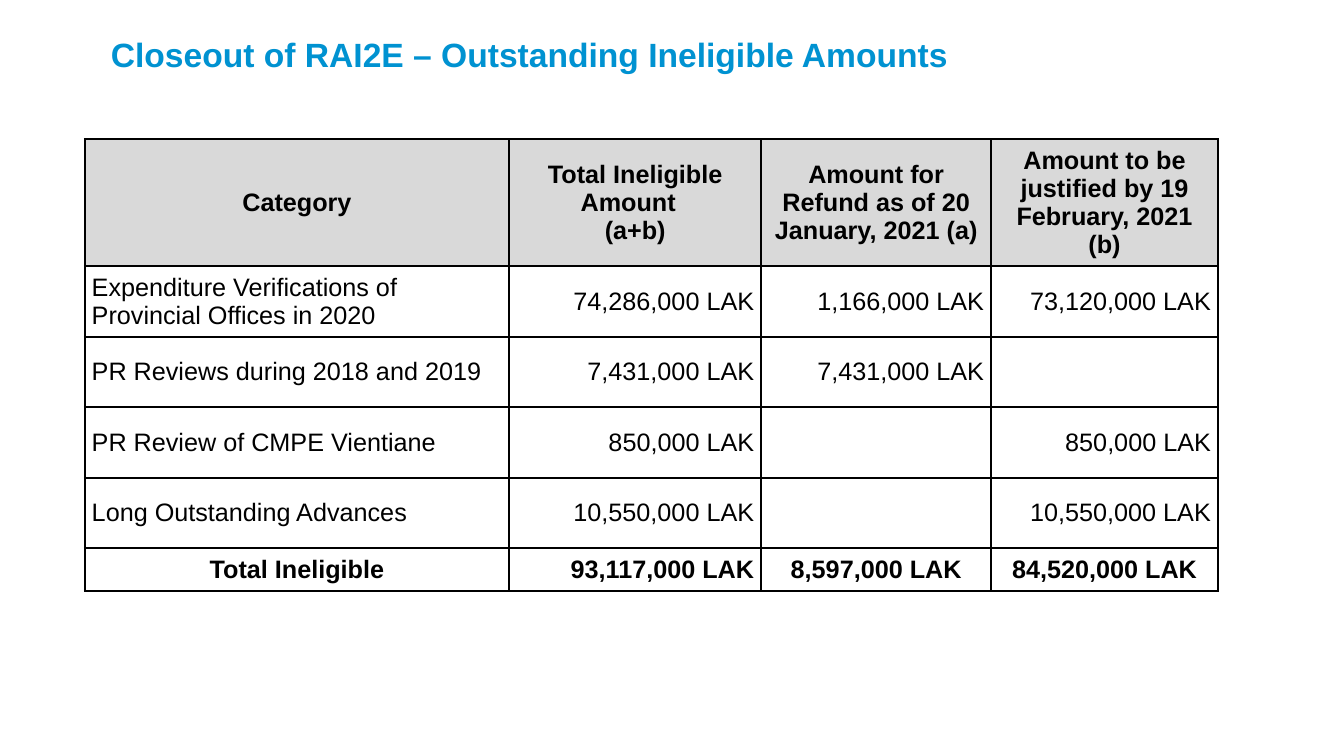
"""Build the slide on outstanding ineligible amounts."""
import dataclasses

import lxml.etree
import pptx
import pptx.dml.color
import pptx.enum.text
import pptx.oxml.ns
import pptx.util

Inches = pptx.util.Inches
Align = pptx.enum.text.PP_ALIGN
Anchor = pptx.enum.text.MSO_ANCHOR


@dataclasses.dataclass(frozen=True)
class Theme:
    font: str = "Arial"
    blue: str = "0092D1"
    black: str = "000000"
    grey: str = "D9D9D9"
    white: str = "FFFFFF"
    title: int = 24
    body: int = 18
    line: float = 1.5


THEME = Theme()
WIDTHS = [4.21, 2.5, 2.28, 2.25]
HEIGHTS = [1.26, 0.7, 0.7, 0.7, 0.7, 0.42]
ROWS = [
    ["Category", "Total Ineligible Amount  \n(a+b)",
     "Amount for Refund as of 20 January, 2021 (a)",
     "Amount to be justified by 19 February, 2021 (b)"],
    ["Expenditure Verifications of Provincial Offices in 2020",
     "74,286,000 LAK", "1,166,000 LAK", "73,120,000 LAK"],
    ["PR Reviews during 2018 and 2019", "7,431,000 LAK", "7,431,000 LAK", ""],
    ["PR Review of CMPE Vientiane", "850,000 LAK", "", "850,000 LAK"],
    ["Long Outstanding Advances", "10,550,000 LAK", "", "10,550,000 LAK"],
    ["Total Ineligible", "93,117,000 LAK", "8,597,000 LAK", "84,520,000 LAK"],
]
BODY = [Align.LEFT] + [Align.RIGHT] * 3
ALIGNS = [[Align.CENTER] * 4] + [BODY] * 4 + [
    [Align.CENTER, Align.RIGHT, Align.CENTER, Align.CENTER]]


def style(frame, size, color, bold, align):
    """Format every run and paragraph of a text frame."""
    for para in frame.paragraphs:
        para.alignment = align
        for run in para.runs:
            run.font.name = THEME.font
            run.font.size = pptx.util.Pt(size)
            run.font.bold = bold
            run.font.color.rgb = pptx.dml.color.RGBColor.from_string(color)


def add_title(slide, text):
    """Add the slide heading."""
    box = slide.shapes.add_textbox(
        Inches(1.1), Inches(0.1), Inches(11.23), Inches(0.87))
    frame = box.text_frame
    frame.word_wrap = True
    frame.vertical_anchor = Anchor.MIDDLE
    frame.margin_left = frame.margin_right = 0
    frame.margin_top = frame.margin_bottom = 0
    frame.text = text
    style(frame, THEME.title, THEME.blue, True, Align.LEFT)


def add_edges(cell):
    """Draw a solid line on each side of a cell."""
    name = pptx.oxml.ns.qn
    props = cell._tc.get_or_add_tcPr()
    for side in ("a:lnL", "a:lnR", "a:lnT", "a:lnB"):
        width = str(int(pptx.util.Pt(THEME.line)))
        line = lxml.etree.SubElement(props, name(side), w=width)
        fill = lxml.etree.SubElement(line, name("a:solidFill"))
        lxml.etree.SubElement(fill, name("a:srgbClr"), val=THEME.black)


def set_cell(cell, text, fill, bold, align, inset):
    """Fill one table cell with its text and look."""
    cell.margin_left = cell.margin_right = Inches(inset)
    cell.margin_top = cell.margin_bottom = Inches(0.03)
    cell.vertical_anchor = Anchor.MIDDLE
    add_edges(cell)
    cell.fill.solid()
    cell.fill.fore_color.rgb = pptx.dml.color.RGBColor.from_string(fill)
    cell.text_frame.text = text
    style(cell.text_frame, THEME.body, THEME.black, bold, align)


def add_grid(slide):
    """Add the table of amounts."""
    table = slide.shapes.add_table(
        len(ROWS), len(WIDTHS), Inches(0.84), Inches(1.38),
        Inches(sum(WIDTHS)), Inches(sum(HEIGHTS))).table
    table.horz_banding = False
    for col, width in zip(table.columns, WIDTHS):
        col.width = Inches(width)
    for row, height in zip(table.rows, HEIGHTS):
        row.height = Inches(height)
    for r, texts in enumerate(ROWS):
        head = r == 0
        bold = head or r == len(ROWS) - 1
        fill = THEME.grey if head else THEME.white
        for c, text in enumerate(texts):
            inset = 0.1 if head and c < 2 else 0.07
            set_cell(table.cell(r, c), text, fill, bold, ALIGNS[r][c], inset)


def main():
    """Build and save the slide."""
    deck = pptx.Presentation()
    deck.slide_width = Inches(13.33)
    deck.slide_height = Inches(7.5)
    slide = deck.slides.add_slide(deck.slide_layouts[6])
    add_title(slide, "Closeout of RAI2E – Outstanding Ineligible Amounts")
    add_grid(slide)
    deck.save("out.pptx")


if __name__ == "__main__":
    main()
